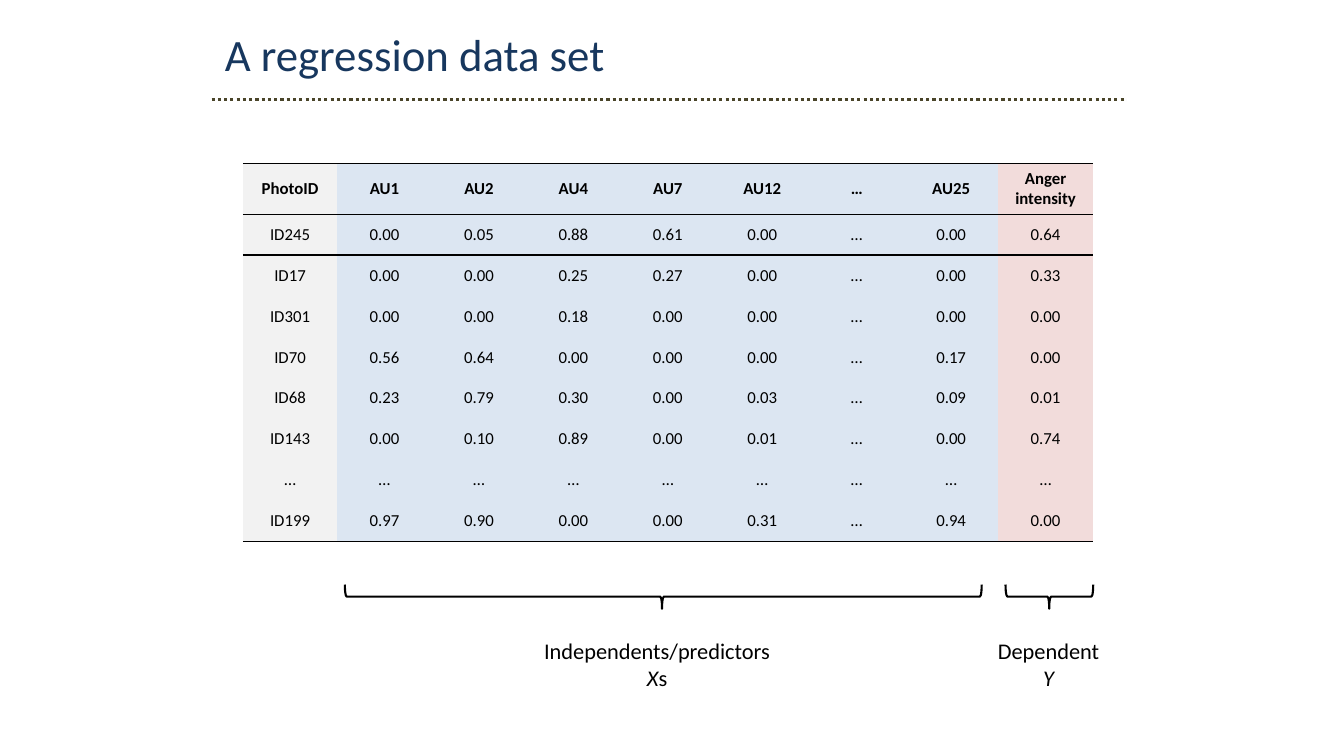
from lxml import etree
from pptx import Presentation
from pptx.dml.color import RGBColor
from pptx.enum.dml import MSO_LINE
from pptx.enum.shapes import MSO_CONNECTOR, MSO_SHAPE
from pptx.enum.text import MSO_ANCHOR, MSO_AUTO_SIZE, PP_ALIGN
from pptx.oxml.ns import qn
from pptx.util import Cm, Pt

STRAIGHT = MSO_CONNECTOR.STRAIGHT
BRACE = MSO_SHAPE.RIGHT_BRACE
DOTS = MSO_LINE.ROUND_DOT
MIDDLE = MSO_ANCHOR.MIDDLE
LEFT, CENTER = PP_ALIGN.LEFT, PP_ALIGN.CENTER
NO_FIT, FIT_SHAPE = MSO_AUTO_SIZE.NONE, MSO_AUTO_SIZE.SHAPE_TO_FIT_TEXT

FONT = "Calibri"
BLACK = "000000"
PLAIN_TABLE = "{2D5ABB26-0587-4C30-8999-92F81FD0307C}"
ID_FILL, PREDICTOR_FILL, DEPENDENT_FILL = "F2F2F2", "DCE6F2", "F2DCDB"
HEADER_HEIGHT, ROW_HEIGHT = 1.29, 1.03
ROWS = [
    ["PhotoID", "AU1", "AU2", "AU4", "AU7", "AU12", "…", "AU25", "Anger intensity"],
    ["ID245", "0.00", "0.05", "0.88", "0.61", "0.00", "…", "0.00", "0.64"],
    ["ID17", "0.00", "0.00", "0.25", "0.27", "0.00", "…", "0.00", "0.33"],
    ["ID301", "0.00", "0.00", "0.18", "0.00", "0.00", "…", "0.00", "0.00"],
    ["ID70", "0.56", "0.64", "0.00", "0.00", "0.00", "…", "0.17", "0.00"],
    ["ID68", "0.23", "0.79", "0.30", "0.00", "0.03", "…", "0.09", "0.01"],
    ["ID143", "0.00", "0.10", "0.89", "0.00", "0.01", "…", "0.00", "0.74"],
    ["…"] * 9,
    ["ID199", "0.97", "0.90", "0.00", "0.00", "0.31", "…", "0.94", "0.00"],
]


def rgb(value):
    return RGBColor.from_string(value)


def set_font(p, size, color=BLACK, bold=False):
    p.font.name = FONT
    p.font.size = Pt(size)
    p.font.bold = bold
    p.font.color.rgb = rgb(color)


def add_heading(slide, text, left, top, width, height):
    title = slide.shapes.title
    title.left, title.top = Cm(left), Cm(top)
    title.width, title.height = Cm(width), Cm(height)
    tf = title.text_frame
    tf.text = text
    tf.auto_size = NO_FIT
    tf.vertical_anchor = MIDDLE
    p = tf.paragraphs[0]
    p.alignment = LEFT
    set_font(p, 32, "17375E")

    y = Cm(top + height + 0.35)
    rule = slide.shapes.add_connector(STRAIGHT, Cm(left - 0.08), y, Cm(left + width + 0.61), y)
    rule.line.color.rgb = rgb("4A452A")
    rule.line.width = Pt(2.25)
    rule.line.dash_style = DOTS
    etree.SubElement(rule.element.spPr, qn("a:effectLst"))


def add_border(cell, side, width):
    tc_pr = cell._tc.get_or_add_tcPr()
    ln = etree.Element(qn(f"a:{side}"), w=str(Pt(width)))
    fill = etree.SubElement(ln, qn("a:solidFill"))
    etree.SubElement(fill, qn("a:srgbClr"), val=BLACK)
    fill_index = tc_pr.index(tc_pr.find(qn("a:solidFill")))
    tc_pr.insert(fill_index, ln)


def add_data_table(slide, left, top, width):
    count = len(ROWS[0])
    height = HEADER_HEIGHT + ROW_HEIGHT * (len(ROWS) - 1)
    frame = slide.shapes.add_table(len(ROWS), count, Cm(left), Cm(top), Cm(width), Cm(height))
    table = frame.table
    table.first_row = table.horz_banding = False
    table._tbl.tblPr.find(qn("a:tableStyleId")).text = PLAIN_TABLE
    for column in table.columns:
        column.width = Cm(width / count)

    fills = [ID_FILL] + [PREDICTOR_FILL] * (count - 2) + [DEPENDENT_FILL]
    bottom_borders = {0: 1, 1: 1.5, len(ROWS) - 1: 1}
    for i, values in enumerate(ROWS):
        table.rows[i].height = Cm(ROW_HEIGHT if i else HEADER_HEIGHT)
        for j, value in enumerate(values):
            cell = table.cell(i, j)
            cell.text = value
            cell.vertical_anchor = MIDDLE
            cell.fill.solid()
            cell.fill.fore_color.rgb = rgb(fills[j])
            p = cell.text_frame.paragraphs[0]
            p.alignment = CENTER
            set_font(p, 12, bold=i == 0)
            if i == 0:
                add_border(cell, "lnT", 1)
            if i in bottom_borders:
                add_border(cell, "lnB", bottom_borders[i])


def add_brace(slide, left, top, width, height):
    x = left + (width - height) / 2
    y = top + (height - width) / 2
    sp = slide.shapes.add_shape(BRACE, Cm(x), Cm(y), Cm(height), Cm(width))
    sp.rotation = 90
    sp.adjustments[0], sp.adjustments[1] = 0.073, 0.502
    sp.shadow.inherit = False
    sp.fill.background()
    sp.line.color.rgb = rgb(BLACK)
    sp.line.width = Pt(1.5)


def add_caption(slide, label, symbol, suffix, left, top, width, height):
    box = slide.shapes.add_textbox(Cm(left), Cm(top), Cm(width), Cm(height))
    tf = box.text_frame
    tf.word_wrap = False
    tf.auto_size = FIT_SHAPE
    p = tf.paragraphs[0]
    p.alignment = CENTER
    set_font(p, 16)
    p.add_run().text = label
    p.add_line_break()
    r = p.add_run()
    r.text = symbol
    r.font.italic = True
    if suffix:
        p.add_run().text = suffix


def build_slide(prs):
    slide = prs.slides.add_slide(prs.slide_layouts[5])
    add_heading(slide, "A regression data set", 5.41, 0.53, 22.33, 1.63)
    add_data_table(slide, 6.12, 4.11, 21.42)
    add_brace(slide, 8.69, 14.73, 16.05, 0.61)
    add_brace(slide, 25.34, 14.73, 2.21, 0.61)
    add_caption(slide, "Independents/predictors", "X", "s", 13.46, 15.93, 6.2, 1.63)
    add_caption(slide, "Dependent", "Y", "", 24.89, 15.93, 3.07, 1.63)


def main():
    prs = Presentation()
    prs.slide_width, prs.slide_height = Cm(33.87), Cm(19.05)
    build_slide(prs)
    prs.save("out.pptx")


if __name__ == "__main__":
    main()
